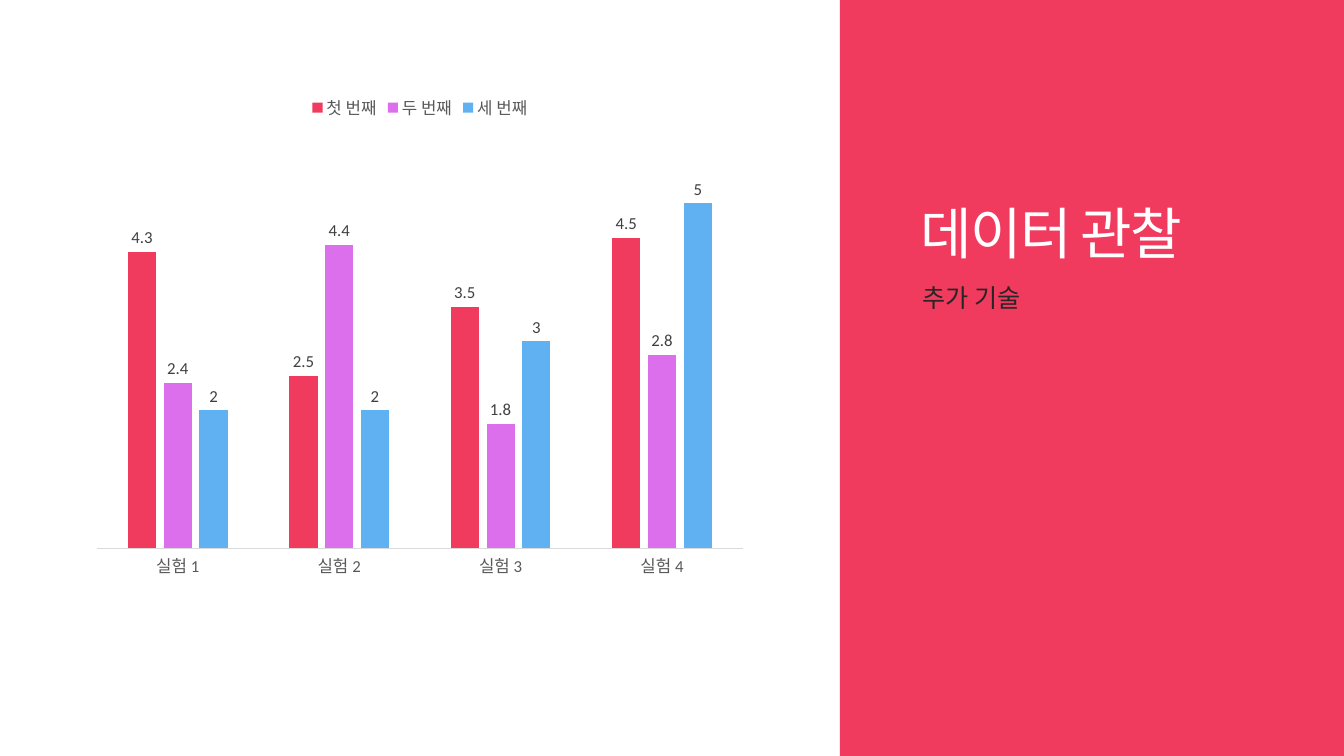
from pptx import Presentation
from pptx.chart.data import CategoryChartData
from pptx.dml.color import RGBColor
from pptx.enum.chart import (XL_CHART_TYPE, XL_LABEL_POSITION,
                             XL_LEGEND_POSITION, XL_TICK_MARK)
from pptx.enum.shapes import MSO_SHAPE
from pptx.enum.text import MSO_ANCHOR, PP_ALIGN
from pptx.util import Inches, Pt

COLUMN = XL_CHART_TYPE.COLUMN_CLUSTERED
OUTSIDE = XL_LABEL_POSITION.OUTSIDE_END
TOP_LEGEND = XL_LEGEND_POSITION.TOP
NO_TICK = XL_TICK_MARK.NONE

# Content
TITLE = "데이터 관찰"
SUBTITLE = "추가 기술"
CATEGORIES = ["실험 1", "실험 2", "실험 3", "실험 4"]
SERIES = [
    ("첫 번째", [4.3, 2.5, 3.5, 4.5], "F03B5E"),
    ("두 번째", [2.4, 4.4, 1.8, 2.8], "DC6FEC"),
    ("세 번째", [2, 2, 3, 5], "60B1F2"),
]
PANEL_COLOR = "F03B5E"

# Places: left, top, width, height in inches
SLIDE = (13.33, 7.5)
PANEL = (8.33, 0, 5, 7.5)
TITLE_BOX = (9.03, 0.59, 3.7, 2.1)
SUBTITLE_BOX = (9.05, 2.75, 3.72, 3.42)
CHART_BOX = (0.83, 0.83, 6.67, 5)


def rgb(code):
    return RGBColor.from_string(code)


def inches(box):
    return [Inches(v) for v in box]


def set_font(font, size, color, name="Calibri"):
    font.size, font.name, font.bold = Pt(size), name, False
    font.color.rgb = rgb(color)


def write(sp, text, size, color, anchor=MSO_ANCHOR.TOP, line=None,
          before=0, spacing=0):
    tf = sp.text_frame
    tf.word_wrap = True
    tf.vertical_anchor = anchor
    p = tf.paragraphs[0]
    p.alignment = PP_ALIGN.LEFT
    p.space_before = Pt(before)
    if line:
        p.line_spacing = line
    r = p.add_run()
    r.text = text
    set_font(r.font, size, color, "Arial")
    if spacing:
        r._r.get_or_add_rPr().set("spc", str(round(spacing * 100)))


prs = Presentation()
prs.slide_width, prs.slide_height = inches(SLIDE)
s = prs.slides.add_slide(prs.slide_layouts[5])

# Side panel, sent behind the title
panel = s.shapes.add_shape(MSO_SHAPE.RECTANGLE, *inches(PANEL))
panel.shadow.inherit = False
panel.fill.solid()
panel.fill.fore_color.rgb = rgb(PANEL_COLOR)
panel.line.fill.background()
s.shapes._spTree.insert(2, panel._element)

# Title and subtitle
title = s.shapes.title
title.left, title.top, title.width, title.height = inches(TITLE_BOX)
write(title, TITLE, 40, "FFFFFF", anchor=MSO_ANCHOR.BOTTOM, line=0.85,
      spacing=-1.2)
subtitle = s.shapes.add_textbox(*inches(SUBTITLE_BOX))
write(subtitle, SUBTITLE, 18, "262626", before=12)

# Chart
data = CategoryChartData()
data.categories = CATEGORIES
for name, values, _ in SERIES:
    data.add_series(name, values)
chart = s.shapes.add_chart(COLUMN, *inches(CHART_BOX), data).chart
set_font(chart.font, 10, "000000")
chart.has_title = False
chart.has_legend = True
chart.legend.position = TOP_LEGEND
chart.legend.include_in_layout = False
set_font(chart.legend.font, 12, "595959")

# Axes
cat_axis, val_axis = chart.category_axis, chart.value_axis
cat_axis.major_tick_mark = cat_axis.minor_tick_mark = NO_TICK
cat_axis.format.line.color.rgb = rgb("D9D9D9")
cat_axis.format.line.width = Pt(0.75)
set_font(cat_axis.tick_labels.font, 12, "595959")
val_axis.minimum_scale, val_axis.maximum_scale = 0, 6
val_axis.has_major_gridlines = False
val_axis.visible = False

# Columns and their labels
plot = chart.plots[0]
plot.vary_by_categories = False
plot.gap_width, plot.overlap = 219, -27
for series, (_, _, color) in zip(plot.series, SERIES):
    series.format.fill.solid()
    series.format.fill.fore_color.rgb = rgb(color)
    labels = series.data_labels
    labels.show_value = True
    labels.position = OUTSIDE
    set_font(labels.font, 12, "404040")

prs.save("out.pptx")
